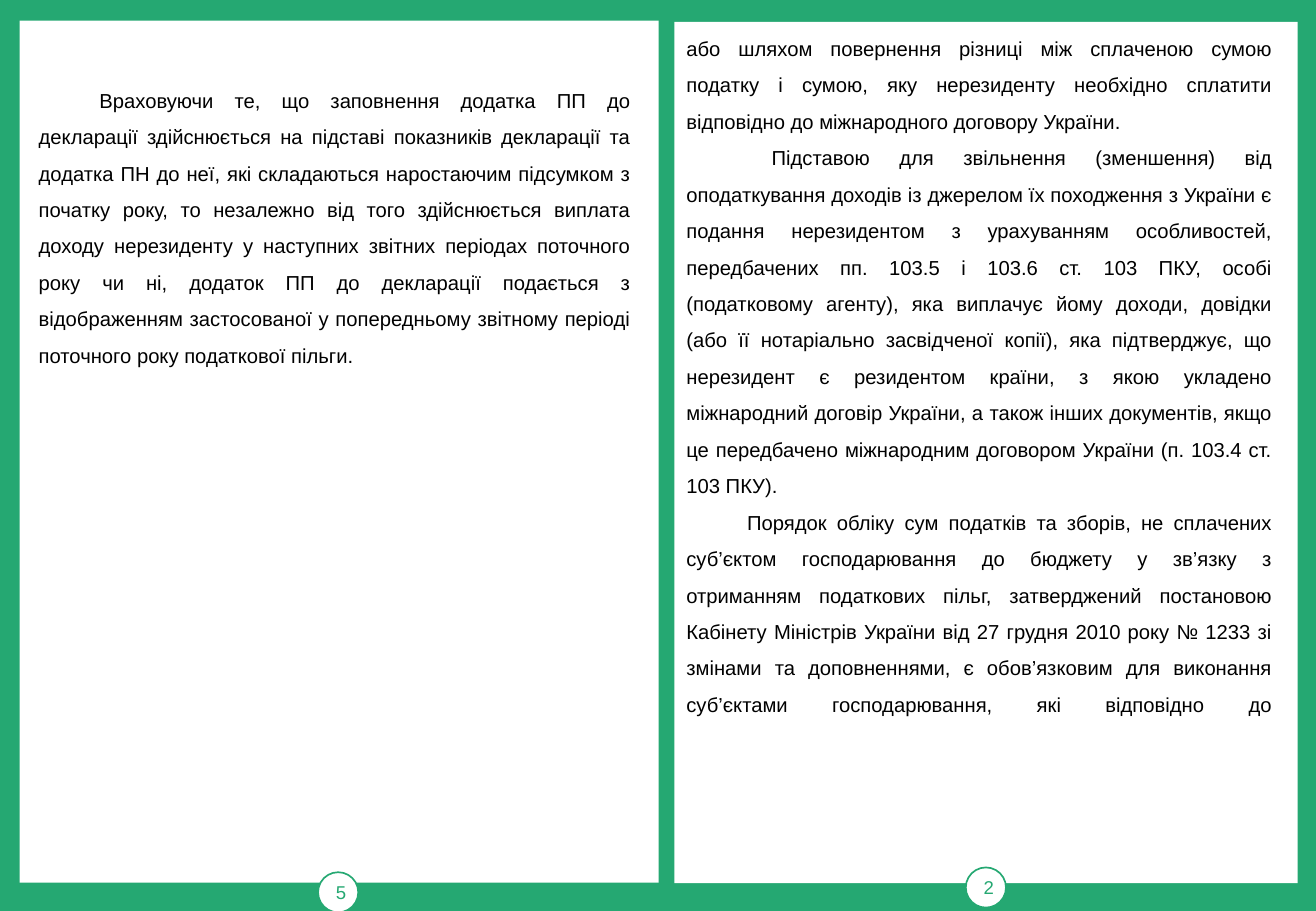
from pptx import Presentation
from pptx.dml.color import RGBColor
from pptx.enum.shapes import MSO_SHAPE
from pptx.enum.text import MSO_ANCHOR, PP_ALIGN
from pptx.util import Cm, Pt

RECT, OVAL = MSO_SHAPE.RECTANGLE, MSO_SHAPE.OVAL
TOP, MIDDLE = MSO_ANCHOR.TOP, MSO_ANCHOR.MIDDLE
CENTER, JUSTIFY = PP_ALIGN.CENTER, PP_ALIGN.JUSTIFY
GREEN, WHITE, BLACK = "25A872", "FFFFFF", "000000"
DISC = 0.84

# Each paragraph: first-line indent in cm, text; "\v" is a line break
LEFT = [
    (1.27, "Враховуючи те, що заповнення додатка ПП до декларації здійснюється "
     "на підставі показників декларації та додатка ПН до неї, які складаються "
     "наростаючим підсумком з початку року, то незалежно від того здійснюється "
     "виплата доходу нерезиденту у наступних звітних періодах поточного року "
     "чи ні, додаток ПП до декларації подається з відображенням застосованої "
     "у попередньому звітному періоді поточного року податкової пільги."),
]
RIGHT = [
    (0, "або шляхом повернення різниці між сплаченою сумою податку і сумою, "
     "яку нерезиденту необхідно сплатити відповідно до міжнародного договору "
     "України."),
    (1.78, "Підставою для звільнення (зменшення) від оподаткування доходів із "
     "джерелом їх походження з України є подання нерезидентом з урахуванням "
     "особливостей, передбачених пп. 103.5 і 103.6 ст. 103 ПКУ, особі "
     "(податковому агенту), яка виплачує йому доходи, довідки (або її "
     "нотаріально засвідченої копії), яка підтверджує, що нерезидент є "
     "резидентом країни, з якою укладено міжнародний договір України, а також "
     "інших документів, якщо це передбачено міжнародним договором України "
     "(п. 103.4 ст. 103 ПКУ)."),
    (1.27, "Порядок обліку сум податків та зборів, не сплачених суб’єктом "
     "господарювання до бюджету у зв’язку з отриманням податкових пільг, "
     "затверджений постановою Кабінету Міністрів України від 27 грудня 2010 "
     "року № 1233 зі змінами та доповненнями, є обов’язковим для виконання "
     "суб’єктами господарювання, які відповідно до\v"),
]
# Boxes are left, top, width, height in cm
PAGES = [
    {"sheet": (0.41, 0.43, 13.36, 18.03), "disc": (6.65, 18.24), "number": "5",
     "box": (0.56, 0.66, 12.88, 7.95), "anchor": MIDDLE, "text": LEFT},
    {"sheet": (14.1, 0.46, 13.03, 18.01), "disc": (20.19, 18.14), "number": "2",
     "box": (14.1, 0.38, 12.75, 18.72), "anchor": TOP, "text": RIGHT},
]


def paint(target, color):
    """Give a fill or a font color its hex value."""
    if hasattr(target, "solid"):
        target.solid()
        target = target.fore_color
    target.rgb = RGBColor.from_string(color)


def style(para, text, size, color, **form):
    para.text = text
    para.font.name, para.font.size = "Arial", Pt(size)
    paint(para.font.color, color)
    for name, value in form.items():
        setattr(para, name, value)


def add_form(group, kind, box):
    form = group.shapes.add_shape(kind, *map(Cm, box))
    form.shadow.inherit = False
    paint(form.fill, WHITE)
    form.line.fill.background()
    return form


def add_sheet(slide, page):
    group = slide.shapes.add_group_shape()
    add_form(group, RECT, page["sheet"])
    disc = add_form(group, OVAL, (*page["disc"], DISC, DISC))
    paint(disc.line.fill, GREEN)
    disc.line.width = Pt(1)
    frame = disc.text_frame
    frame.vertical_anchor = MIDDLE
    style(frame.paragraphs[0], page["number"], 11, GREEN, alignment=CENTER)


def add_body(slide, page):
    frame = slide.shapes.add_textbox(*map(Cm, page["box"])).text_frame
    frame.word_wrap = True
    frame.vertical_anchor = page["anchor"]
    for i, (indent, text) in enumerate(page["text"]):
        para = frame.add_paragraph() if i else frame.paragraphs[0]
        style(para, text, 12, BLACK, alignment=JUSTIFY, line_spacing=1.5)
        para._p.get_or_add_pPr().set("indent", str(Cm(indent)))


def main():
    deck = Presentation()
    deck.slide_width, deck.slide_height = Cm(27.51), Cm(19.05)
    slide = deck.slides.add_slide(deck.slide_layouts[6])
    paint(slide.background.fill, GREEN)
    for add in (add_sheet, add_body):
        for page in PAGES:
            add(slide, page)
    deck.save("out.pptx")


if __name__ == "__main__":
    main()
